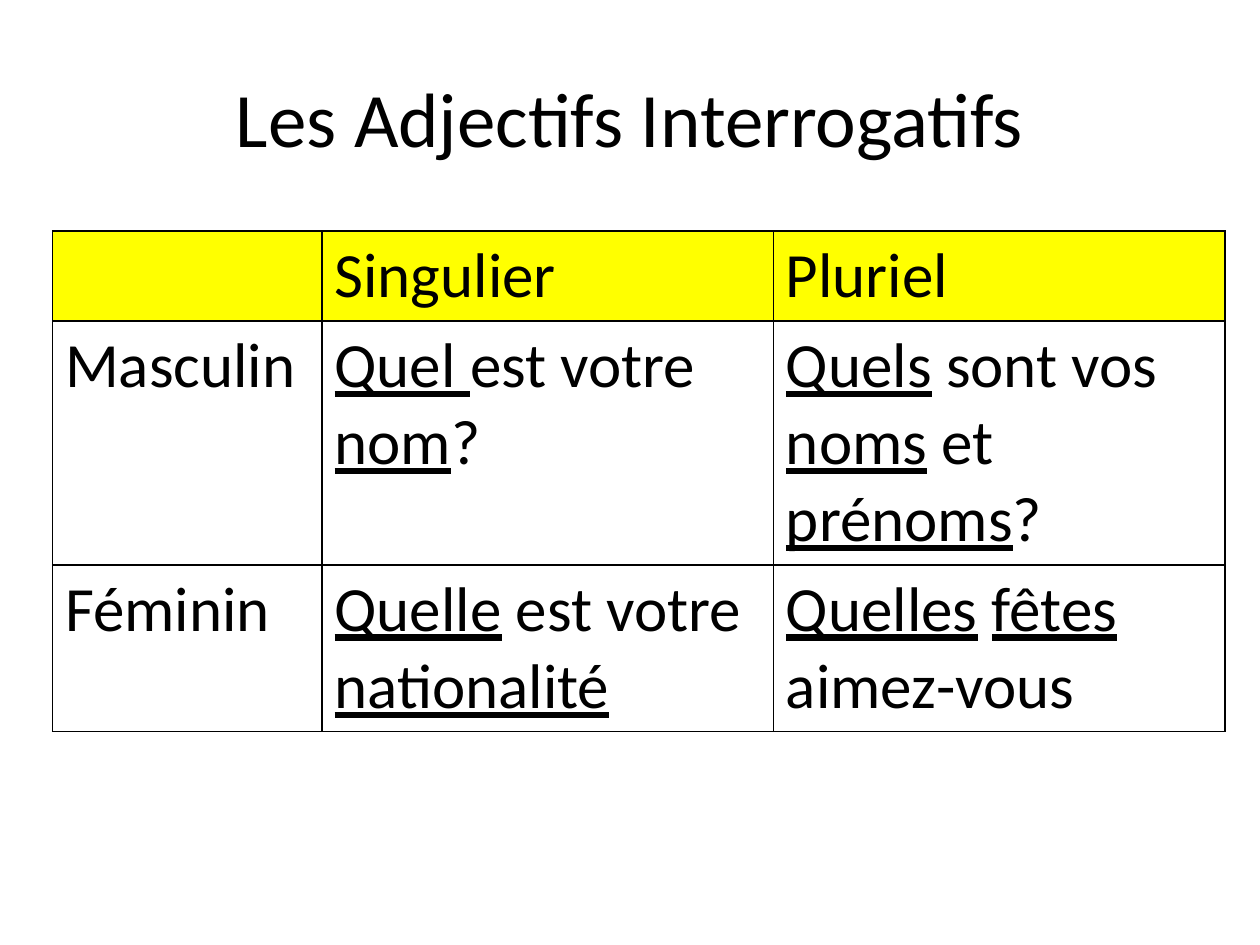
"""Build a slide with a table of French interrogative adjectives."""
from dataclasses import dataclass

from lxml import etree
from pptx import Presentation
from pptx import util as u
from pptx.dml.color import RGBColor
from pptx.enum import text as t
from pptx.oxml import ns

BLACK = RGBColor(0, 0, 0)
YELLOW = RGBColor(255, 255, 0)
WIDTHS = (5.43, 9.1, 9.1)
HEIGHT = 1.04


@dataclass
class Entry:
    """Cell wording, with underlined parts between bars."""
    words: str
    head: bool = False


ROWS = (
    (Entry("", True), Entry("Singulier", True), Entry("Pluriel", True)),
    (Entry("Masculin"), Entry("|Quel |est votre |nom|?"),
     Entry("|Quels| sont vos |noms| et |prénoms|?")),
    (Entry("Féminin"), Entry("|Quelle| est votre |nationalité|"),
     Entry("|Quelles| |fêtes| aimez-vous")),
)


def apply(item, form: dict) -> None:
    """Set each attribute named in the dict."""
    for name, value in form.items():
        setattr(item, name, value)


def write(para, words: str, size: int) -> None:
    """Add runs, underlining every second part."""
    for i, part in enumerate(words.split("|")):
        if part:
            run = para.add_run()
            run.text = part
            apply(run.font, {"name": "Calibri", "size": u.Pt(size),
                             "underline": i % 2 == 1})
            run.font.color.rgb = BLACK


def frame(cell) -> None:
    """Draw a thin black line on all four sides."""
    props = cell._tc.get_or_add_tcPr()
    for side in "LRTB":
        line = etree.SubElement(props, ns.qn(f"a:ln{side}"), w=str(u.Pt(1)))
        fill = etree.SubElement(line, ns.qn("a:solidFill"))
        etree.SubElement(fill, ns.qn("a:srgbClr"), val=str(BLACK))


def draw(cell, entry: Entry) -> None:
    """Fill one table cell."""
    frame(cell)
    if entry.head:
        cell.fill.solid()
        cell.fill.fore_color.rgb = YELLOW
    else:
        cell.fill.background()
    write(cell.text_frame.paragraphs[0], entry.words, 36)


def main() -> None:
    """Build and save the slide."""
    deck = Presentation()
    apply(deck, {"slide_width": u.Cm(25.4), "slide_height": u.Cm(19.05)})
    slide = deck.slides.add_slide(deck.slide_layouts[5])
    title = slide.shapes.title
    apply(title, {"left": u.Cm(1.27), "top": u.Cm(0.76),
                  "width": u.Cm(22.86), "height": u.Cm(3.18)})
    title.text_frame.vertical_anchor = t.MSO_ANCHOR.MIDDLE
    para = title.text_frame.paragraphs[0]
    para.alignment = t.PP_ALIGN.CENTER
    write(para, "Les Adjectifs Interrogatifs", 44)

    table = slide.shapes.add_table(
        len(ROWS), len(WIDTHS), u.Cm(1.06), u.Cm(4.66),
        u.Cm(sum(WIDTHS)), u.Cm(HEIGHT * len(ROWS))).table
    apply(table, {"first_row": False, "horz_banding": False})
    for col, width in zip(table.columns, WIDTHS):
        col.width = u.Cm(width)
    for r, row in enumerate(ROWS):
        for c, entry in enumerate(row):
            draw(table.cell(r, c), entry)
    deck.save("out.pptx")


if __name__ == "__main__":
    main()
